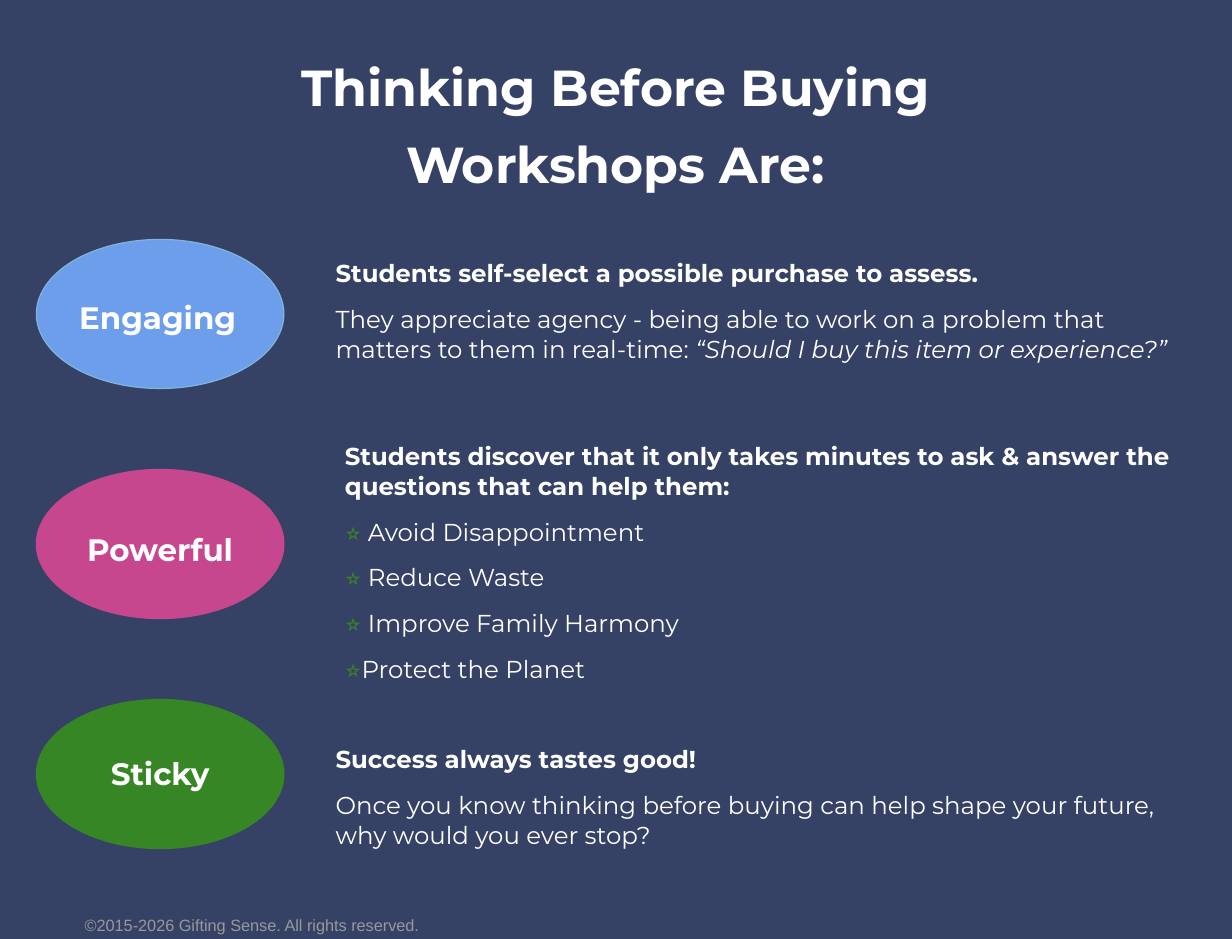
import pptx
import pptx.util
import pptx.dml.color
import pptx.enum.shapes
import pptx.enum.text

Inches = pptx.util.Inches
Pt = pptx.util.Pt
RGBColor = pptx.dml.color.RGBColor
ALIGN = pptx.enum.text.PP_ALIGN
ANCHOR = pptx.enum.text.MSO_ANCHOR

NAVY = RGBColor(0x36, 0x41, 0x66)
WHITE = RGBColor(0xFF, 0xFF, 0xFF)
GRAY = RGBColor(0x99, 0x99, 0x99)
BLUE = RGBColor(0x6D, 0x9E, 0xEB)
SKY = RGBColor(0x80, 0xB5, 0xDB)
PINK = RGBColor(0xC7, 0x47, 0x8F)
GREEN = RGBColor(0x36, 0x86, 0x26)

FONT = "Montserrat"
BOLD = {"bold": True}
PLAIN = {}
STAR = {"color": GREEN}


def style(run, size, font=FONT, color=WHITE, bold=False, italic=False):
    run.font.name = font
    run.font.size = Pt(size)
    run.font.color.rgb = color
    run.font.bold = bold
    run.font.italic = italic


def add_text(slide, place, paras, size, gap=0, align=ALIGN.LEFT,
             pads=(0.1, 0.1, 0.1, 0.1), anchor=ANCHOR.TOP):
    """Each paragraph is a list of (text, look) runs; gap parts them, in points."""
    box = slide.shapes.add_textbox(*map(Inches, place))
    frame = box.text_frame
    frame.word_wrap = True
    frame.vertical_anchor = anchor
    (frame.margin_left, frame.margin_top,
     frame.margin_right, frame.margin_bottom) = map(Inches, pads)
    for i, parts in enumerate(paras):
        para = frame.add_paragraph() if i else frame.paragraphs[0]
        para.alignment = align
        para.space_before = Pt(gap if i else 0)
        for text, look in parts:
            run = para.add_run()
            run.text = text
            style(run, size, **look)


def add_title(slide):
    lines = ["Thinking Before Buying", "Workshops Are:"]
    add_text(slide, (0.65, 0.29, 9.19, 1.55), [[(line, BOLD)] for line in lines],
             31, 10, ALIGN.CENTER, (0.07, 0.04, 0.07, 0.04), ANCHOR.MIDDLE)


def add_oval(slide, top, fill, edge):
    oval = slide.shapes.add_shape(
        pptx.enum.shapes.MSO_SHAPE.OVAL,
        Inches(0.31), Inches(top), Inches(2.11), Inches(1.27))
    oval.shadow.inherit = False
    oval.fill.solid()
    oval.fill.fore_color.rgb = fill
    oval.line.color.rgb = edge
    oval.line.width = Pt(0.75)


def add_label(slide, left, top, word):
    add_text(slide, (left, top, 2.03, 0.42), [[(word, BOLD)]], 19,
             align=ALIGN.CENTER)


def add_body(slide, place, head, paras, gap):
    add_text(slide, place, [[(head, BOLD)]] + paras, 15, gap,
             pads=(0.05, 0.1, 0, 0.1))


def main():
    deck = pptx.Presentation()
    deck.slide_width, deck.slide_height = Inches(10.5), Inches(8)
    slide = deck.slides.add_slide(deck.slide_layouts[6])
    slide.background.fill.solid()
    slide.background.fill.fore_color.rgb = NAVY

    add_text(slide, (0, 7.71, 4.29, 0.37),
             [[("©2015-2026 Gifting Sense. All rights reserved.",
                {"font": "Arial", "color": GRAY})]], 10, align=ALIGN.CENTER)
    add_title(slide)

    rows = [("Engaging", BLUE, SKY, 0.33, 2.44),
            ("Powerful", PINK, PINK, 0.35, 4.42),
            ("Sticky", GREEN, GREEN, 0.35, 6.33)]
    for i, (word, fill, edge, left, top) in enumerate(rows):
        add_oval(slide, 2.04 + 1.96 * i, fill, edge)
        add_label(slide, left, top, word)

    add_body(slide, (2.81, 2.1, 7.39, 1.11),
             "Students self-select a possible purchase to assess.",
             [[("They appreciate agency - being able to work on a problem that "
                "matters to them in real-time: ", PLAIN),
               ("“Should I buy this item or experience?”", {"italic": True})]],
             10.4)
    gains = [("⭐ ", "Avoid Disappointment"), ("⭐ ", "Reduce Waste"),
             ("⭐ ", "Improve Family Harmony"), ("⭐", "Protect the Planet")]
    add_body(slide, (2.89, 3.66, 7.23, 2.29),
             "Students discover that it only takes minutes to ask & answer the "
             "questions that can help them:",
             [[(star, STAR), (gain, PLAIN)] for star, gain in gains], 10.2)
    add_body(slide, (2.81, 6.24, 7.39, 1.11), "Success always tastes good!",
             [[("Once you know thinking before buying can help shape your "
                "future, why would you ever stop?", PLAIN)]], 10.4)

    deck.save("out.pptx")


if __name__ == "__main__":
    main()
